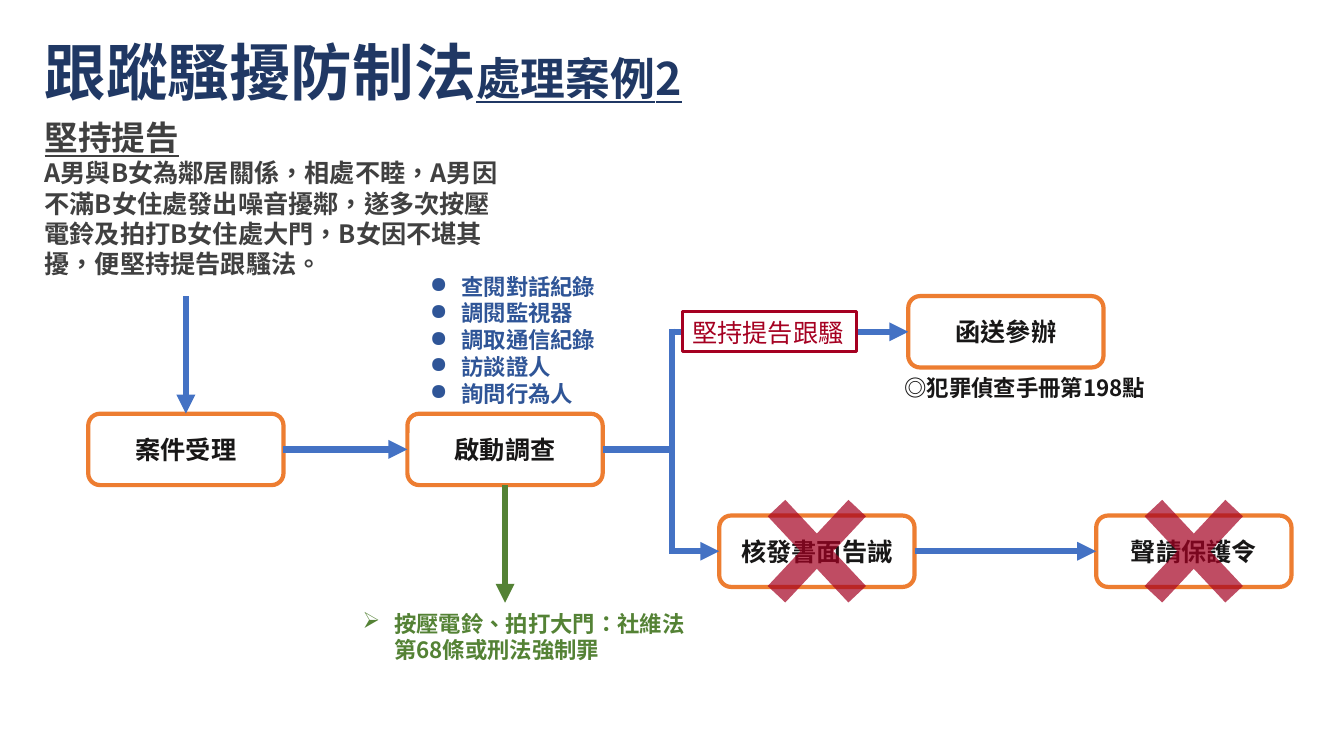
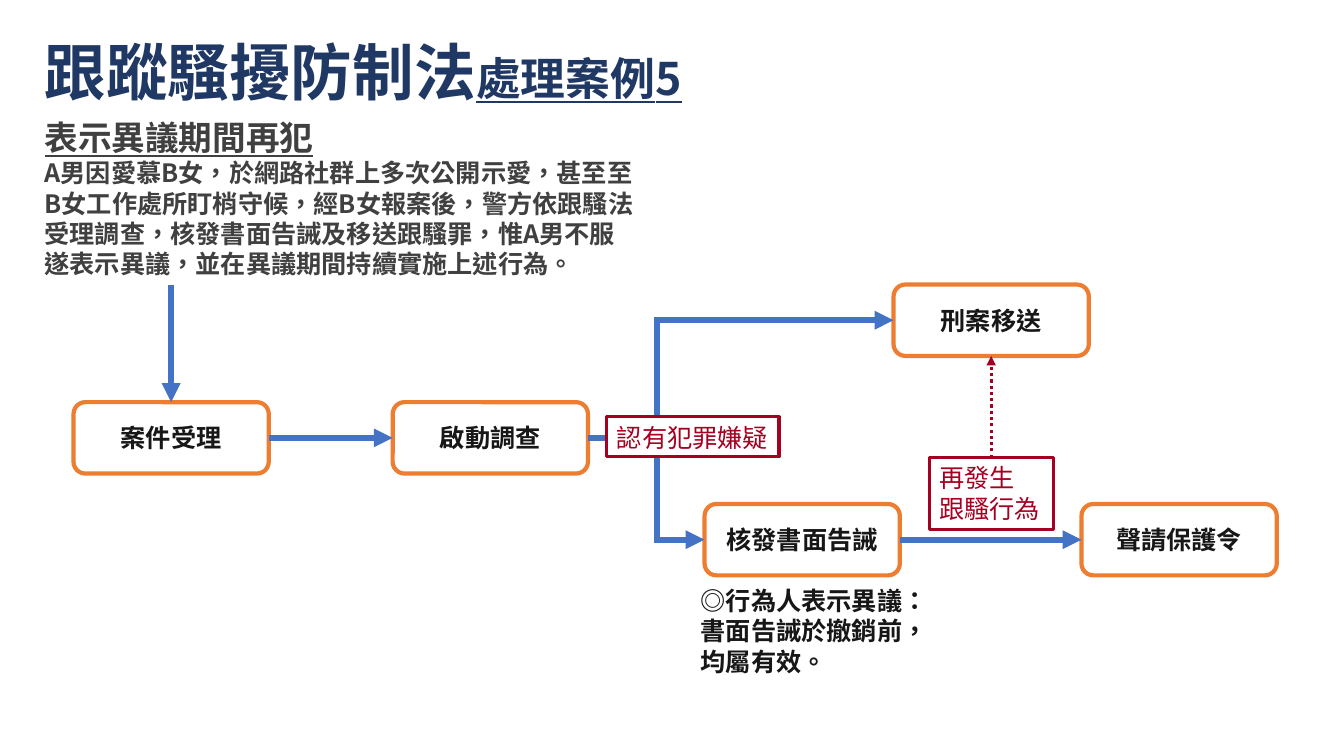
from dataclasses import dataclass
from typing import Optional

import pptx
import pptx.dml.color
import pptx.enum.dml
import pptx.enum.lang
import pptx.enum.shapes
import pptx.enum.text
import pptx.oxml
import pptx.oxml.ns
import pptx.util
from lxml import etree

EMU_PER_PX = 9525
COLORS = {
    "title": "203864", "body": "404040", "ink": "181717", "node": "ED7D31",
    "flow": "4472C4", "check": "2F5597", "law": "548235", "alert": "A50021",
    "white": "FFFFFF",
}
CJK = "Noto Sans CJK SC"

# Text formats: font attributes plus a colour key
FORMATS = {
    "title": {"size": 44, "bold": True, "name": CJK, "color": "title"},
    "case": {"size": 32, "bold": True, "underline": True, "name": CJK, "color": "title"},
    "heading": {"size": 24, "bold": True, "underline": True, "name": CJK, "color": "body"},
    "story": {"size": 18, "bold": True, "name": CJK, "color": "body"},
    "node": {"size": 18, "bold": True, "name": CJK, "color": "ink"},
    "note": {"size": 16, "bold": True, "name": CJK, "color": "ink"},
    "check": {"size": 16, "bold": True, "name": CJK, "color": "check"},
    "law": {"size": 16, "bold": True, "name": CJK, "color": "law"},
    "label": {"size": 18, "name": "Calibri", "color": "alert"},
}

# Flow chart geometry
NODE_W, NODE_H = 186, 68
TRUNK_X = 640
HALF_LINE = 3
BULLET_INDENT = 30
CROSS_W, CROSS_H = 148, 158


@dataclass(frozen=True)
class Node:
    text: str
    left: int
    top: int

    @property
    def right(self) -> int:
        return self.left + NODE_W

    @property
    def bottom(self) -> int:
        return self.top + NODE_H

    @property
    def mid_x(self) -> int:
        return self.left + NODE_W // 2

    @property
    def mid_y(self) -> int:
        return self.top + NODE_H // 2


@dataclass(frozen=True)
class TextBlock:
    left: int
    top: int
    width: int
    height: int
    paragraphs: list  # each paragraph is a list of (text, format) runs
    bullet: Optional[str] = None
    line_spacing: Optional[int] = None
    fill: Optional[str] = None
    outline: Optional[str] = None


@dataclass(frozen=True)
class Case:
    number: int
    heading: str
    story: str
    story_width: int
    outcome: str
    shift: tuple


CASES = [
    Case(2, "堅持提告",
         "A男與B女為鄰居關係，相處不睦，A男因不滿B女住處發出噪音擾鄰，遂多次按壓電鈴及"
         "拍打B女住處大門，B女因不堪其擾，便堅持提告跟騷法。",
         456, "函送參辦", (0, 0)),
    Case(5, "表示異議期間再犯",
         "A男因愛慕B女，於網路社群上多次公開示愛，甚至至B女工作處所盯梢守候，經B女報案後，"
         "警方依跟騷法受理調查，核發書面告誡及移送跟騷罪，惟A男不服遂表示異議，"
         "並在異議期間持續實施上述行為。",
         584, "刑案移送", (-14, -11)),
]


def px(value: int) -> int:
    return pptx.util.Emu(value * EMU_PER_PX)


def rgb(key: str) -> pptx.dml.color.RGBColor:
    return pptx.dml.color.RGBColor.from_string(COLORS[key])


def sub(parent, tag: str, **attributes):
    return etree.SubElement(parent, pptx.oxml.ns.qn(tag), **attributes)


def lines(texts: list, style: str) -> list:
    return [[(text, style)] for text in texts]


# Text
def add_run(paragraph, text: str, style: str) -> None:
    run = paragraph.add_run()
    run.text = text
    run.font.language_id = pptx.enum.lang.MSO_LANGUAGE_ID.TRADITIONAL_CHINESE
    for attribute, value in FORMATS[style].items():
        if attribute == "color":
            run.font.color.rgb = rgb(value)
        else:
            setattr(run.font, attribute, pptx.util.Pt(value) if attribute == "size" else value)
    properties = run.font._element
    if FORMATS[style]["name"] == CJK:
        sub(properties, "a:ea", typeface=CJK)
    if style == "label":
        outline = sub(properties, "a:ln", w=str(pptx.util.Pt(0.75)))
        sub(sub(outline, "a:solidFill"), "a:srgbClr", val=COLORS["alert"])
        properties.insert(0, outline)


def add_text(slide, block: TextBlock) -> None:
    box = slide.shapes.add_textbox(px(block.left), px(block.top), px(block.width), px(block.height))
    frame = box.text_frame
    frame.word_wrap = True
    frame.auto_size = pptx.enum.text.MSO_AUTO_SIZE.SHAPE_TO_FIT_TEXT
    if block.fill:
        box.fill.solid()
        box.fill.fore_color.rgb = rgb(block.fill)
    if block.outline:
        box.line.color.rgb = rgb(block.outline)
        box.line.width = pptx.util.Pt(2.25)
    for index, runs in enumerate(block.paragraphs):
        paragraph = frame.add_paragraph() if index else frame.paragraphs[0]
        if block.line_spacing:
            paragraph.line_spacing = pptx.util.Pt(block.line_spacing)
        if block.bullet:
            properties = paragraph._p.get_or_add_pPr()
            properties.set("marL", str(px(BULLET_INDENT)))
            properties.set("indent", str(px(-BULLET_INDENT)))
            sub(properties, "a:buChar", char=block.bullet)
        for text, style in runs:
            add_run(paragraph, text, style)


# Flow chart parts
def add_node(slide, node: Node) -> None:
    box = slide.shapes.add_shape(pptx.enum.shapes.MSO_SHAPE.ROUNDED_RECTANGLE,
                                 px(node.left), px(node.top), px(NODE_W), px(NODE_H))
    box.shadow.inherit = False
    box.fill.background()
    box.line.color.rgb = rgb("node")
    box.line.width = pptx.util.Pt(3)
    box.text_frame.vertical_anchor = pptx.enum.text.MSO_ANCHOR.MIDDLE
    paragraph = box.text_frame.paragraphs[0]
    paragraph.alignment = pptx.enum.text.PP_ALIGN.CENTER
    add_run(paragraph, node.text, "node")


def add_line(slide, start: tuple, end: tuple, color: str = "flow", width: float = 4.5,
             arrow: bool = True, dotted: bool = False) -> None:
    connector = slide.shapes.add_connector(
        pptx.enum.shapes.MSO_CONNECTOR.STRAIGHT, *(px(value) for value in start + end))
    connector.line.color.rgb = rgb(color)
    connector.line.width = pptx.util.Pt(width)
    if dotted:
        connector.line.dash_style = pptx.enum.dml.MSO_LINE.ROUND_DOT
    if arrow:
        sub(connector.line._get_or_add_ln(), "a:tailEnd", type="triangle")
    sub(connector._element.spPr, "a:effectLst")


def add_cross(slide, node: Node) -> None:
    cross = slide.shapes.add_shape(
        pptx.enum.shapes.MSO_SHAPE.MATH_MULTIPLY, px(node.mid_x - CROSS_W // 2),
        px(node.mid_y - CROSS_H // 2), px(CROSS_W), px(CROSS_H))
    cross.adjustments[0] = 0.155
    cross.shadow.inherit = False
    cross.line.fill.background()
    cross.fill.solid()
    cross.fill.fore_color.rgb = rgb("alert")
    color = cross._element.spPr.find(".//" + pptx.oxml.ns.qn("a:srgbClr"))
    sub(color, "a:alpha", val="70000")


# Parts shared by every case
def add_case_text(slide, case: Case) -> None:
    add_text(slide, TextBlock(33, 18, 657, 90, [
        [("跟蹤騷擾防制法", "title"), (f"處理案例{case.number}", "case")]], line_spacing=60))
    add_text(slide, TextBlock(33, 107, case.story_width, 165, [
        [(case.heading, "heading")], [(case.story, "story")]]))


def add_flow(slide, case: Case) -> dict:
    dx, dy = case.shift
    places = {
        "intake": ("案件受理", 84, 394),
        "inquiry": ("啟動調查", 388, 394),
        "outcome": (case.outcome, 865, 282),
        "warning": ("核發書面告誡", 685, 491),
        "order": ("聲請保護令", 1044, 491),
    }
    nodes = {key: Node(text, x + dx, y + dy) for key, (text, x, y) in places.items()}
    intake, inquiry, outcome, warning, order = nodes.values()
    trunk = TRUNK_X + dx
    for node in nodes.values():
        add_node(slide, node)
    add_line(slide, (intake.mid_x, intake.top - 112), (intake.mid_x, intake.top))
    add_line(slide, (intake.right, intake.mid_y), (inquiry.left, inquiry.mid_y))
    add_line(slide, (inquiry.right, inquiry.mid_y), (trunk, inquiry.mid_y), arrow=False)
    add_line(slide, (trunk, outcome.mid_y - HALF_LINE), (trunk, warning.mid_y + HALF_LINE),
             arrow=False)
    for branch in (outcome, warning):
        add_line(slide, (trunk, branch.mid_y), (branch.left, branch.mid_y))
    add_line(slide, (warning.right, warning.mid_y), (order.left, order.mid_y))
    return nodes


# Details of each case
def add_insisted_charge(slide, nodes: dict) -> None:
    inquiry = nodes["inquiry"]
    add_line(slide, (inquiry.mid_x, inquiry.bottom), (inquiry.mid_x, inquiry.bottom + 112), "law")
    checks = ["查閱對話紀錄", "調閱監視器", "調取通信紀錄", "訪談證人", "詢問行為人"]
    add_text(slide, TextBlock(400, 255, 182, 139, lines(checks, "check"), bullet="●"))
    add_text(slide, TextBlock(336, 576, 333, 61, lines(
        ["按壓電鈴、拍打大門：社維法第68條或刑法強制罪"], "law"), bullet="➢"))
    for key in ("warning", "order"):
        add_cross(slide, nodes[key])
    add_text(slide, TextBlock(650, 297, 166, 38, lines(["堅持提告跟騷"], "label"),
                              fill="white", outline="alert"))
    add_text(slide, TextBlock(852, 352, 273, 36, lines(["◎犯罪偵查手冊第198點"], "note")))


def add_repeat_offence(slide, nodes: dict) -> None:
    outcome = nodes["outcome"]
    add_text(slide, TextBlock(885, 436, 118, 68, lines(["再發生", "跟騷行為"], "label"),
                              outline="alert"))
    add_text(slide, TextBlock(578, 397, 164, 38, lines(["認有犯罪嫌疑"], "label"),
                              fill="white", outline="alert"))
    add_line(slide, (outcome.mid_x, 436), (outcome.mid_x, outcome.bottom), "alert", 2.25,
             dotted=True)
    add_text(slide, TextBlock(658, 553, 231, 97, lines(
        ["◎行為人表示異議：", "書面告誡於撤銷前，均屬有效。"], "node")))


def main() -> None:
    deck = pptx.Presentation()
    deck.slide_width, deck.slide_height = px(1280), px(720)
    for case, add_details in zip(CASES, (add_insisted_charge, add_repeat_offence)):
        slide = deck.slides.add_slide(deck.slide_layouts[6])
        add_case_text(slide, case)
        add_details(slide, add_flow(slide, case))
    deck.save("out.pptx")


if __name__ == "__main__":
    main()
